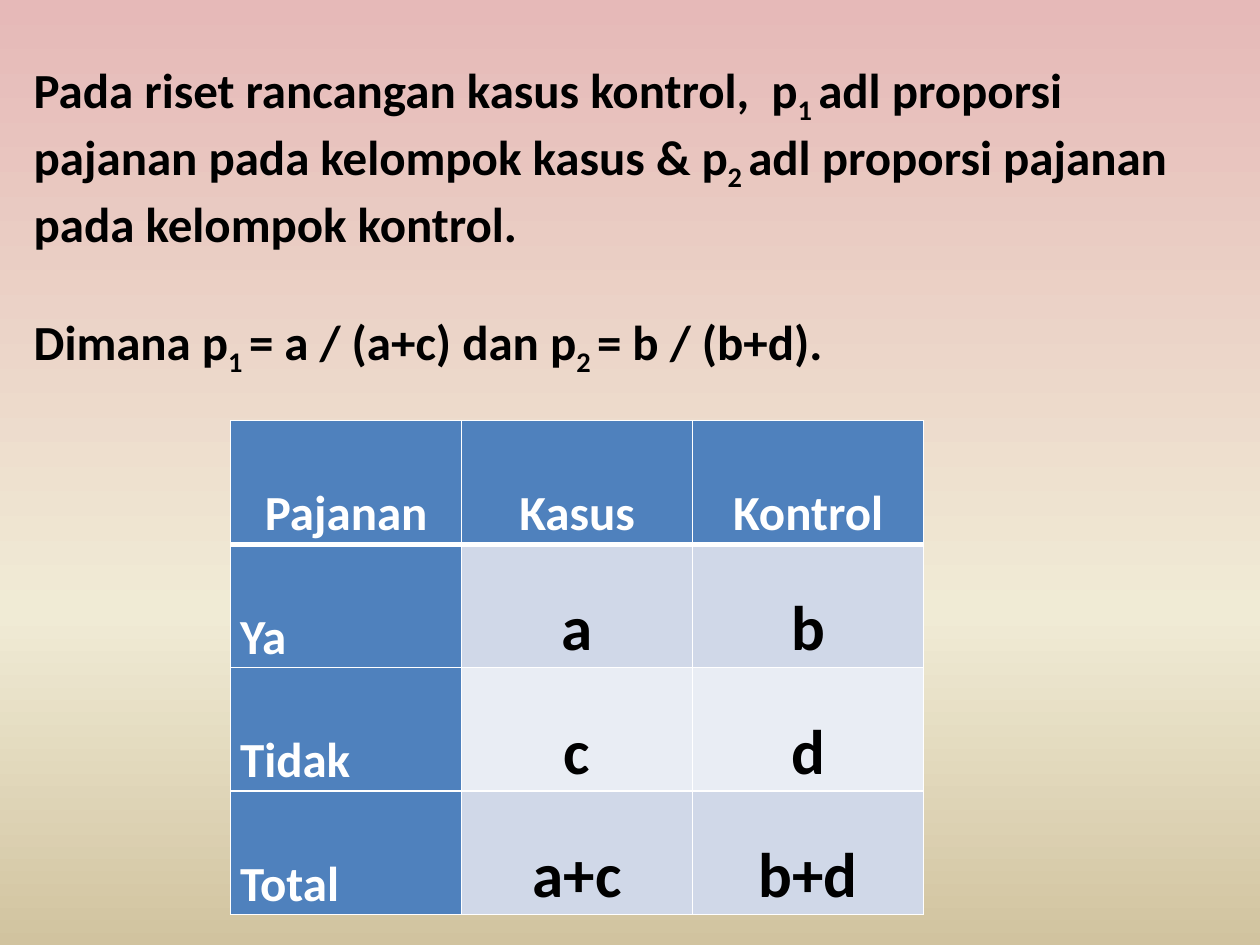
import copy

import pptx
import pptx.dml.color
import pptx.enum.text
import pptx.oxml
import pptx.oxml.ns
import pptx.util
from pptx.util import Cm

WHITE, BLACK, BLUE = "FFFFFF", "000000", "4F81BD"
BANDS = ["D0D8E8", "E9EDF4"]
STOPS = [(0, "E6B9B8"), (0.65, "F0EBD5"), (1, "D1C39F")]
# Each paragraph alternates plain text and subscripts
TEXT = [
    ["Pada riset rancangan kasus kontrol,  p", "1 ",
     "adl proporsi pajanan pada kelompok kasus & p", "2 ",
     "adl proporsi pajanan pada kelompok kontrol."],
    ["Dimana p", "1 ", "= a / (a+c) dan p", "2 ", "= b / (b+d)."],
]
ROWS = [
    ["Pajanan", "Kasus", "Kontrol"],
    ["Ya", "a", "b"],
    ["Tidak", "c", "d"],
    ["Total", "a+c", "b+d"],
]


def color(code):
    return pptx.dml.color.RGBColor.from_string(code)


def style(item, form):
    for name, value in form.items():
        setattr(item, name, value)


def add_run(para, text, size, code):
    run = para.add_run()
    run.text = text
    style(run.font, {"name": "Calibri", "size": pptx.util.Pt(size), "bold": True})
    run.font.color.rgb = color(code)
    return run


def paint_back(slide):
    fill = slide.background.fill
    fill.gradient()
    stops = slide.element.find(".//" + pptx.oxml.ns.qn("a:gsLst"))
    stops.append(copy.deepcopy(stops[0]))
    fill.gradient_angle = 270
    for stop, (place, code) in zip(fill.gradient_stops, STOPS):
        stop.position = place
        stop.color.rgb = color(code)


def add_text(slide):
    box = slide.shapes.add_textbox(Cm(0.43), Cm(1.07), Cm(24.56), Cm(7.44))
    frame = box.text_frame
    frame.word_wrap = True
    for i, parts in enumerate(TEXT):
        para = frame.add_paragraph() if i else frame.paragraphs[0]
        if i:
            para.space_before = pptx.util.Pt(34)
        for j, part in enumerate(parts):
            run = add_run(para, part, 28, BLACK)
            if j % 2:
                run.font._element.set("baseline", "-25000")


def add_line(cell, side, width):
    space = pptx.oxml.ns.nsdecls("a")
    cell._tc.get_or_add_tcPr().append(pptx.oxml.parse_xml(
        f'<a:ln{side} {space} w="{pptx.util.Pt(width)}"><a:solidFill>'
        f'<a:srgbClr val="{WHITE}"/></a:solidFill></a:ln{side}>'))


def fill_cell(cell, text, row, col):
    head = row == 0 or col == 0
    edge = {"L": 1, "R": 1, "T": 3 if row == 1 else 1, "B": 3 if row == 0 else 1}
    for side, width in edge.items():
        add_line(cell, side, width)
    cell.fill.solid()
    cell.fill.fore_color.rgb = color(BLUE if head else BANDS[(row - 1) % 2])
    style(cell, {
        "vertical_anchor": pptx.enum.text.MSO_ANCHOR.BOTTOM,
        "margin_left": Cm(0.19), "margin_right": Cm(0.19),
        "margin_top": 0, "margin_bottom": 0,
    })
    align = pptx.enum.text.PP_ALIGN
    para = cell.text_frame.paragraphs[0]
    style(para, {
        "alignment": align.LEFT if row and not col else align.CENTER,
        "line_spacing": 1.15,
    })
    add_run(para, text, 28 if head else 36, WHITE if head else BLACK)


def add_grid(slide):
    table = slide.shapes.add_table(
        len(ROWS), len(ROWS[0]), Cm(4.65), Cm(8.48), Cm(13.97), Cm(9.96)).table
    for i, row in enumerate(ROWS):
        for j, text in enumerate(row):
            fill_cell(table.cell(i, j), text, i, j)


def main():
    deck = pptx.Presentation()
    style(deck, {"slide_width": Cm(25.4), "slide_height": Cm(19.05)})
    slide = deck.slides.add_slide(deck.slide_layouts[6])
    paint_back(slide)
    add_text(slide)
    add_grid(slide)
    deck.save("out.pptx")


if __name__ == "__main__":
    main()
